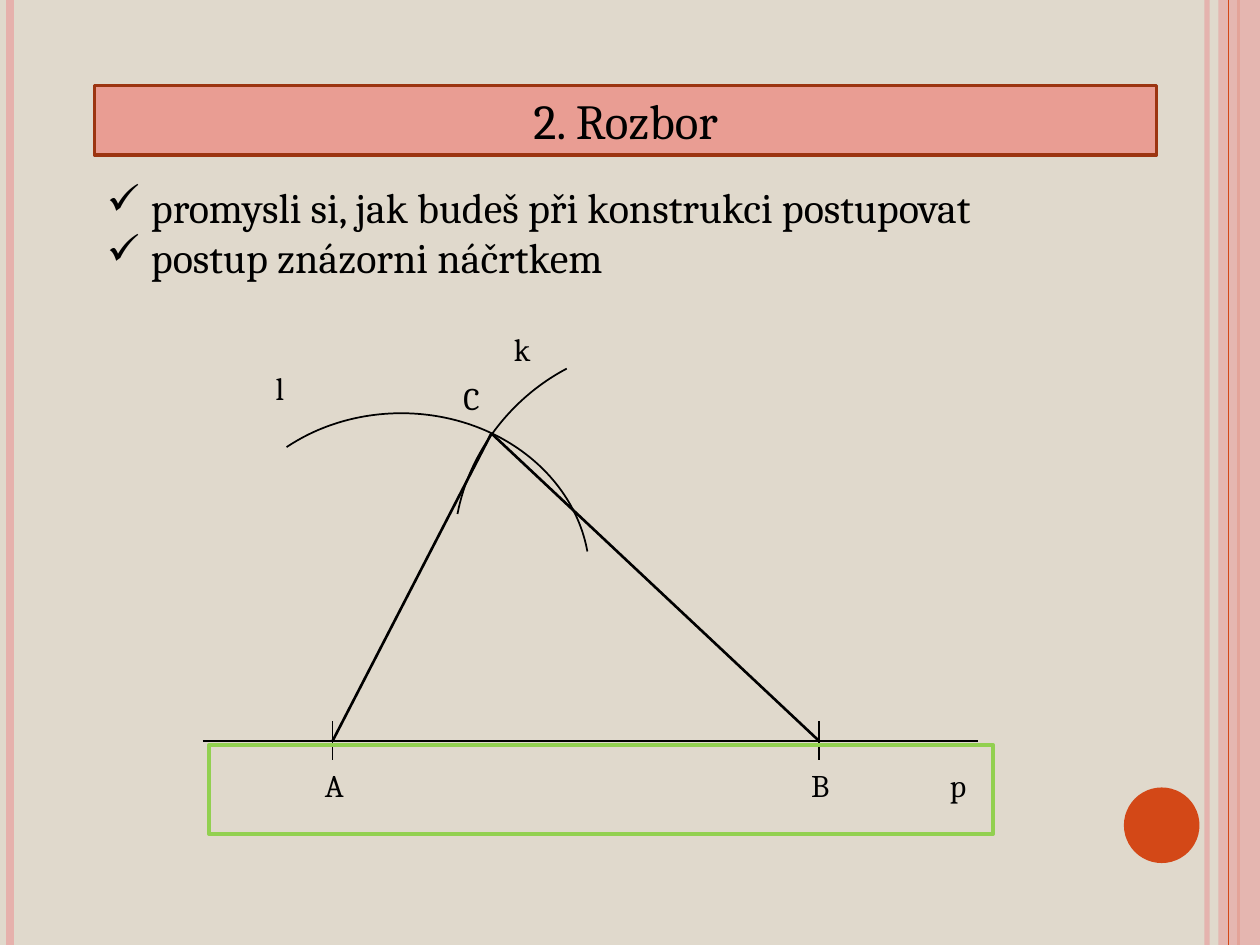
"""Build the slide "2. Rozbor" with a triangle construction sketch."""
from dataclasses import dataclass
from typing import NamedTuple, Optional

from lxml.etree import SubElement
from pptx import Presentation
from pptx.dml.color import RGBColor
from pptx.enum.shapes import MSO_CONNECTOR as Connector, MSO_SHAPE as Shape
from pptx.enum.text import MSO_ANCHOR as Anchor, PP_ALIGN as Align
from pptx.oxml.ns import qn
from pptx.util import Inches, Pt


@dataclass(frozen=True)
class Theme:
    font: str = "Cambria"
    title: int = 28
    body: int = 24
    label: int = 18
    ink: str = "000000"
    paper: str = "E0D9CC"
    rose: str = "E6B1AC"
    orange: str = "D34817"
    banner: str = "E99D93"
    banner_edge: str = "9C3511"
    green: str = "92D050"


class Point(NamedTuple):
    column: float
    row: float


class Area(NamedTuple):
    column: float
    row: float
    columns: float
    rows: float


class Stroke(NamedTuple):
    color: str
    width: float
    opacity: int = 100


class Stripe(NamedTuple):
    column: float
    stroke: Stroke


class Arc(NamedTuple):
    area: Area
    start: float
    end: float
    rotation: float


class Label(NamedTuple):
    text: str
    corner: Point


THEME = Theme()
COLUMNS, ROWS = 100, 75
CELL = Inches(10) / COLUMNS
THIN, THICK = Stroke(THEME.ink, 1), Stroke(THEME.ink, 1.5)
A, B, C = Point(26.4, 58.8), Point(65, 58.8), Point(39, 34.4)
TICK = 1.55
BULLET_INDENT = 3.5

LEFT_STRIPES = [
    Stripe(95.8, Stroke(THEME.rose, 3, 93)),
    Stripe(0.8, Stroke(THEME.rose, 4.5)),
    Stripe(98.3, Stroke(THEME.orange, 1.5)),
]
EDGE_STRIPE = Stripe(97.5, Stroke(THEME.orange, 0.75))
SEGMENTS = [(Point(16.1, A.row), Point(77.6, A.row)), (C, B), (A, C)]
ARCS = [
    Arc(Area(16.9, 32.8, 29.9, 26), 228.55, 352.18, 0),
    Arc(Area(35.1, 28.5, 29.9, 26), 228.55, 293.1, 314.4),
]
LABELS = [
    Label("A", Point(24.8, 60.3)),
    Label("B", Point(63.4, 60.3)),
    Label("p", Point(74.4, 60.3)),
    Label("k", Point(39.8, 25.7)),
    Label("l", Point(20.9, 28.8)),
    Label("C", Point(35.8, 29.6)),
]
STEPS = ["promysli si, jak budeš při konstrukci postupovat", "postup znázorni náčrtkem"]


def cells(*counts: float) -> list[int]:
    return [round(count * CELL) for count in counts]


def set_opacity(fill, opacity: int) -> None:
    if opacity < 100:
        color = fill._xPr.find(f".//{qn('a:srgbClr')}")
        SubElement(color, qn("a:alpha"), val=str(opacity * 1000))


def apply_stroke(line, stroke: Stroke) -> None:
    line.width = Pt(stroke.width)
    line.color.rgb = RGBColor.from_string(stroke.color)
    set_opacity(line.fill, stroke.opacity)


def draw_line(page, start: Point, end: Point, stroke: Stroke) -> None:
    line = page.shapes.add_connector(Connector.STRAIGHT, *cells(*start, *end))
    apply_stroke(line.line, stroke)
    SubElement(line._element.spPr, qn("a:effectLst"))


def draw_stripe(page, stripe: Stripe) -> None:
    draw_line(page, Point(stripe.column, 0), Point(stripe.column, ROWS), stripe.stroke)


def draw_shape(page, kind: Shape, area: Area, fill: Optional[str] = None,
               stroke: Optional[Stroke] = None, opacity: int = 100):
    shape = page.shapes.add_shape(kind, *cells(*area))
    shape.shadow.inherit = False
    if fill:
        shape.fill.solid()
        shape.fill.fore_color.rgb = RGBColor.from_string(fill)
        set_opacity(shape.fill, opacity)
    else:
        shape.fill.background()
    if stroke:
        apply_stroke(shape.line, stroke)
    else:
        shape.line.fill.background()
    return shape


def draw_arc(page, arc: Arc) -> None:
    shape = draw_shape(page, Shape.ARC, arc.area, stroke=THIN)
    for index, degrees in enumerate((arc.start, arc.end)):
        shape.adjustments[index] = degrees * 0.6
    shape.rotation = arc.rotation


def write(box, text: str, size: int) -> None:
    box.text_frame.text = text
    box.text_frame.word_wrap = True
    for para in box.text_frame.paragraphs:
        for span in para.runs:
            span.font.name = THEME.font
            span.font.size = Pt(size)
            span.font.color.rgb = RGBColor.from_string(THEME.ink)


def draw_label(page, label: Label) -> None:
    box = page.shapes.add_textbox(*cells(*label.corner, 6, 4))
    write(box, label.text, THEME.label)


def draw_steps(page, area: Area, steps: list[str]) -> None:
    box = page.shapes.add_textbox(*cells(*area))
    write(box, "\n".join(steps), THEME.body)
    [indent] = cells(BULLET_INDENT)
    for para in box.text_frame.paragraphs:
        properties = para._p.get_or_add_pPr()
        properties.set("marL", str(indent))
        properties.set("indent", str(-indent))
        SubElement(properties, qn("a:buChar"), char="✓")


def draw_frame(page) -> None:
    for stripe in LEFT_STRIPES:
        draw_stripe(page, stripe)
    draw_shape(page, Shape.RECTANGLE, Area(96.7, 0, 3.3, ROWS), THEME.rose, opacity=87)
    draw_stripe(page, EDGE_STRIPE)
    draw_shape(page, Shape.OVAL, Area(89.2, 62.5, 6, 6), THEME.orange)


def draw_construction(page) -> None:
    for start, end in SEGMENTS:
        draw_line(page, start, end, THICK)
    for point in (A, B):
        draw_line(page, Point(point.column, point.row - TICK),
                  Point(point.column, point.row + TICK), THIN)
    for arc in ARCS:
        draw_arc(page, arc)
    for label in LABELS:
        draw_label(page, label)
    draw_shape(page, Shape.RECTANGLE, Area(16.6, 59.1, 62.2, 7.1),
               stroke=Stroke(THEME.green, 2.25))


def main() -> None:
    deck = Presentation()
    deck.slide_width, deck.slide_height = cells(COLUMNS, ROWS)
    page = deck.slides.add_slide(deck.slide_layouts[6])
    page.background.fill.solid()
    page.background.fill.fore_color.rgb = RGBColor.from_string(THEME.paper)
    draw_frame(page)
    banner = draw_shape(page, Shape.RECTANGLE, Area(7.5, 6.8, 84.3, 5.5),
                        THEME.banner, Stroke(THEME.banner_edge, 2))
    write(banner, "2. Rozbor", THEME.title)
    banner.text_frame.vertical_anchor = Anchor.MIDDLE
    banner.text_frame.paragraphs[0].alignment = Align.CENTER
    draw_steps(page, Area(7.5, 13.9, 84.3, 9.1), STEPS)
    draw_construction(page)
    deck.save("out.pptx")


if __name__ == "__main__":
    main()
